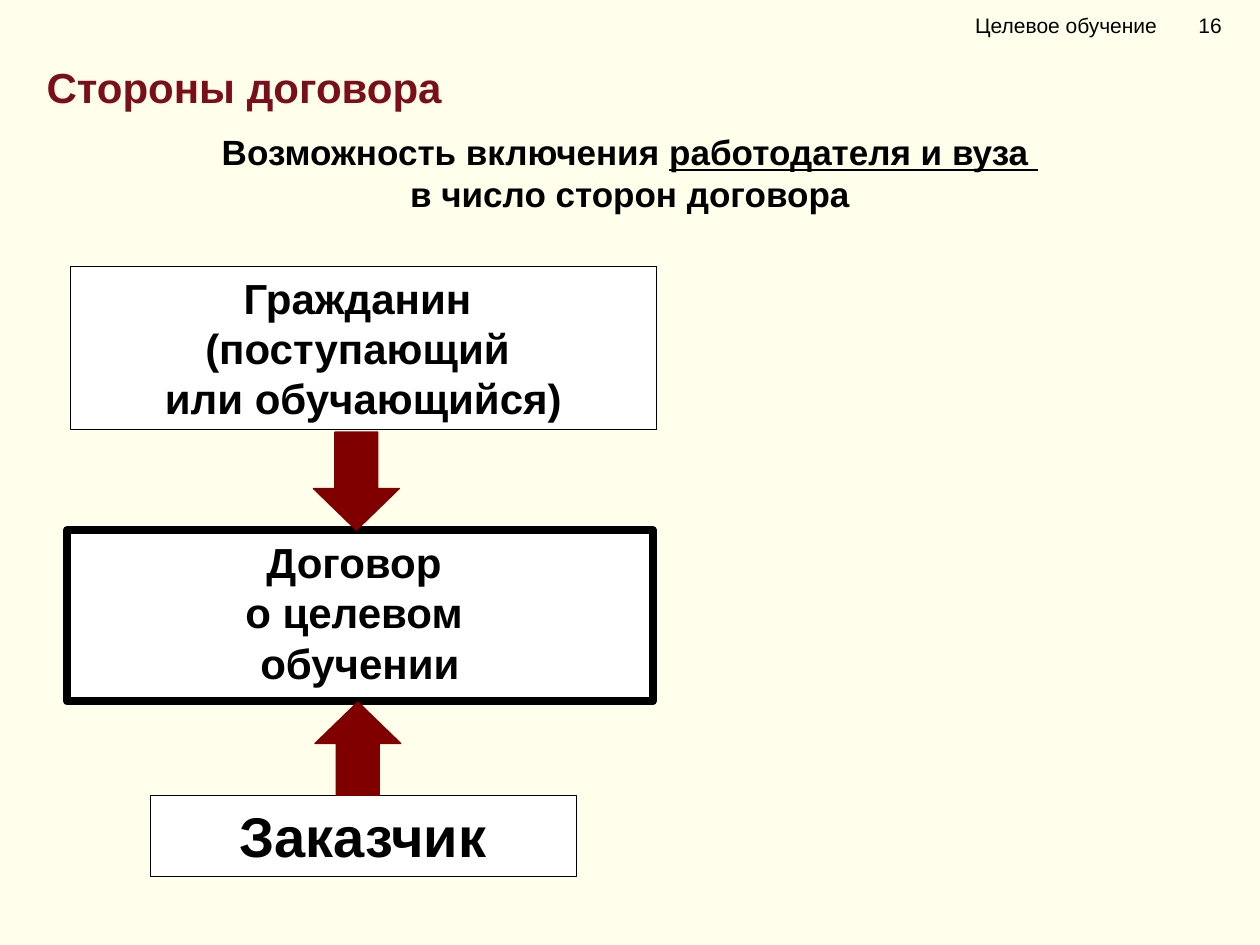
from lxml import etree
from pptx import Presentation
from pptx import util as u
from pptx.dml.color import RGBColor
from pptx.enum import shapes, text
from pptx.oxml.ns import qn

COLORS = {"bg": "FFFFEB", "box": "FFFFFF", "ink": "000000",
          "arrow": "800000", "title": "7B0F19"}
FONT = "Arial"
CENTER, LEFT = text.PP_ALIGN.CENTER, text.PP_ALIGN.LEFT

# Content: positions are left, top, width, height in cm
TITLE = [["Стороны договора"]]
LEAD = [["Возможность включения ", "работодателя и вуза "],
        ["в число сторон договора"]]
HEADER = [["Целевое обучение\t16"]]
PARTIES = [  # lines, position, text size, border width
    (["Договор ", "о целевом ", "обучении"], (1.35, 10.69, 11.81, 3.45), 24, 4.5),
    (["Заказчик"], (3.02, 16.03, 8.59, 1.63), 32, 0.25),
    (["Гражданин ", "(поступающий ", "или обучающийся)"],
     (1.42, 5.36, 11.81, 3.3), 24, 0.25),
]
ARROWS = [
    (shapes.MSO_SHAPE.DOWN_ARROW, (6.32, 8.71, 1.73, 1.98)),
    (shapes.MSO_SHAPE.UP_ARROW, (6.35, 14.15, 1.73, 1.88)),
]


def rgb(name):
    return RGBColor.from_string(COLORS[name])


def write(sp, lines, size, color="ink", bold=True, align=CENTER,
          anchor=text.MSO_ANCHOR.TOP, underlined=()):
    tf = sp.text_frame
    tf.word_wrap = True
    tf.vertical_anchor = anchor
    for i, runs in enumerate(lines):
        p = tf.paragraphs[0] if i == 0 else tf.add_paragraph()
        p.alignment = align
        for words in runs:
            r = p.add_run()
            r.text = words
            r.font.name, r.font.size, r.font.bold = FONT, u.Pt(size), bold
            r.font.color.rgb = rgb(color)
            if words in underlined:
                r.font.underline = True
    return tf


def add_shape(kind, pos, fill, line, width):
    sp = s.shapes.add_shape(kind, *map(u.Cm, pos))
    sp.shadow.inherit = False
    sp.fill.solid()
    sp.fill.fore_color.rgb = rgb(fill)
    sp.line.color.rgb = rgb(line)
    sp.line.width = u.Pt(width)
    return sp


def add_text(pos, lines, size, **style):
    return write(s.shapes.add_textbox(*map(u.Cm, pos)), lines, size, **style)


prs = Presentation()
prs.slide_width, prs.slide_height = u.Cm(25.4), u.Cm(19.05)
s = prs.slides.add_slide(prs.slide_layouts[6])
s.background.fill.solid()
s.background.fill.fore_color.rgb = rgb("bg")

# Parties and the contract
for lines, pos, size, border in PARTIES:
    sp = add_shape(shapes.MSO_SHAPE.RECTANGLE, pos, "box", "ink", border)
    write(sp, [[line] for line in lines], size)

# Lead sentence
add_text((0, 2.51, 25.4, 1.96), LEAD, 20, underlined=[LEAD[0][1]])

# Arrows pointing at the contract
for kind, pos in ARROWS:
    sp = add_shape(kind, pos, "arrow", "arrow", 0.75)
    sp.adjustments[0], sp.adjustments[1] = 0.5, 0.485

# Section name and page number, parted by a tab stop
tf = add_text((18.9, 0, 6.5, 1.02), HEADER, 12, bold=False, align=LEFT,
              anchor=text.MSO_ANCHOR.MIDDLE)
tf.margin_left = u.Cm(0.76)
tabs = etree.SubElement(tf.paragraphs[0]._p.get_or_add_pPr(), qn("a:tabLst"))
etree.SubElement(tabs, qn("a:tab"), pos=str(u.Cm(4.5)), algn="l")

# Title
add_text((0.69, 1.12, 23.6, 1.19), TITLE, 24, color="title", align=LEFT)

prs.save("out.pptx")
